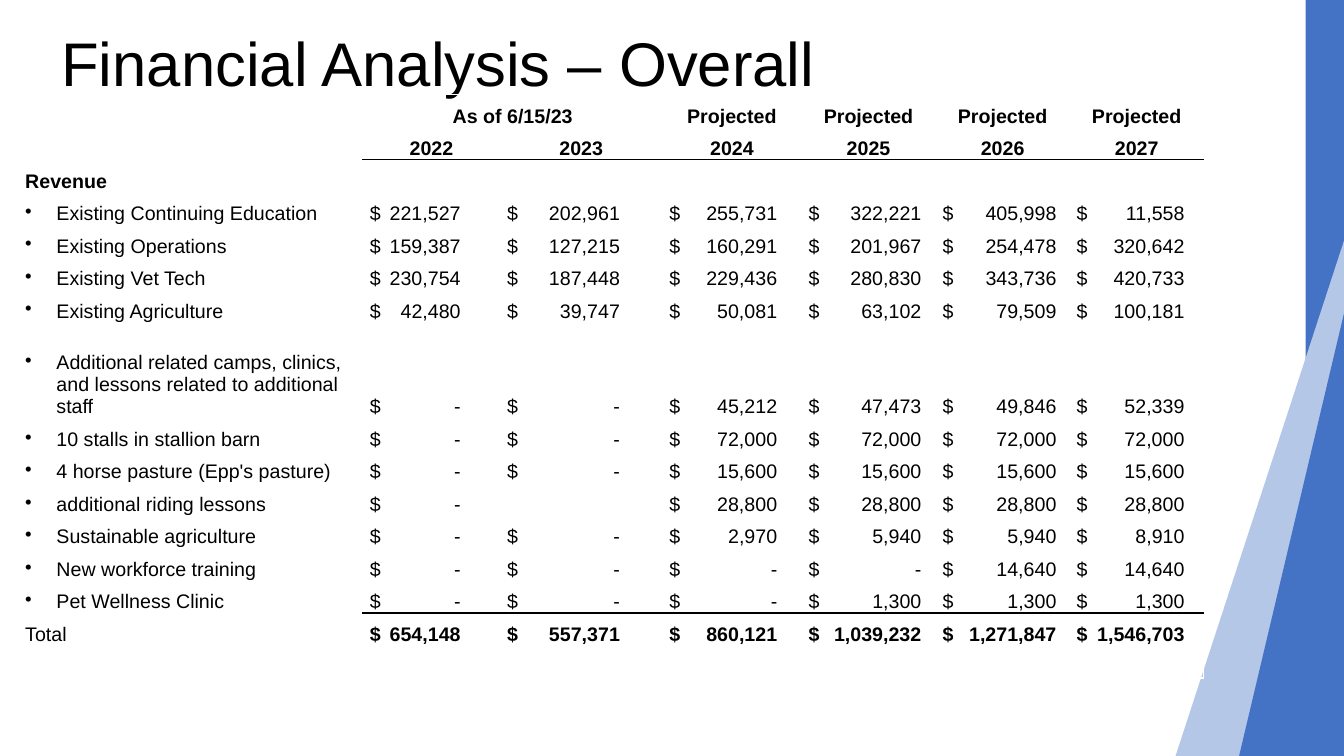
"""Builds the overall financial analysis slide with its revenue table."""
from lxml import etree
from pptx import Presentation
from pptx.dml.color import RGBColor
from pptx.enum.shapes import MSO_SHAPE
from pptx.enum.text import MSO_ANCHOR, PP_ALIGN
from pptx.oxml.ns import qn
from pptx.util import Inches, Pt

RECTANGLE = MSO_SHAPE.RECTANGLE
TRIANGLE = MSO_SHAPE.ISOSCELES_TRIANGLE
MIDDLE, BOTTOM = MSO_ANCHOR.MIDDLE, MSO_ANCHOR.BOTTOM
LEFT, CENTER = PP_ALIGN.LEFT, PP_ALIGN.CENTER
BLACK = RGBColor(0x00, 0x00, 0x00)
BLUE = RGBColor(0x44, 0x72, 0xC4)
PALE_BLUE = RGBColor(0xB4, 0xC7, 0xE7)
FONT = "Arial"

WIDTH, HEIGHT = 13.33, 7.5
TABLE_LEFT, TABLE_TOP, TABLE_HEIGHT = 0.24, 0.94, 5.79
COLUMN_WIDTHS = [3.36, 1.36, 1.61, 1.38, 1.33, 1.33, 1.33]
AMOUNT_TABS = [0.9, 1.12, 1.07, 1.12, 1.13, 1.07]
TALL_ROW, TALL_HEIGHT = 7, 0.95
HEADER_ROWS, YEAR_ROW, LAST_ITEM_ROW, TOTAL_ROW = 2, 1, 13, 14
BULLET_INDENT = 0.31

ROWS = [
    ["", "As of 6/15/23", "", "Projected", "Projected", "Projected", "Projected"],
    ["", "2022", "2023", "2024", "2025", "2026", "2027"],
    ["Revenue", "", "", "", "", "", ""],
    ["Existing Continuing Education", "221,527", "202,961", "255,731", "322,221", "405,998", "11,558"],
    ["Existing Operations", "159,387", "127,215", "160,291", "201,967", "254,478", "320,642"],
    ["Existing Vet Tech", "230,754", "187,448", "229,436", "280,830", "343,736", "420,733"],
    ["Existing Agriculture", "42,480", "39,747", "50,081", "63,102", "79,509", "100,181"],
    ["Additional related camps, clinics, and lessons related to additional staff",
     "-", "-", "45,212", "47,473", "49,846", "52,339"],
    ["10 stalls in stallion barn", "-", "-", "72,000", "72,000", "72,000", "72,000"],
    ["4 horse pasture (Epp's pasture)", "-", "-", "15,600", "15,600", "15,600", "15,600"],
    ["additional riding lessons", "-", "", "28,800", "28,800", "28,800", "28,800"],
    ["Sustainable agriculture", "-", "-", "2,970", "5,940", "5,940", "8,910"],
    ["New workforce training", "-", "-", "-", "-", "14,640", "14,640"],
    ["Pet Wellness Clinic", "-", "-", "-", "1,300", "1,300", "1,300"],
    ["Total", "654,148", "557,371", "860,121", "1,039,232", "1,271,847", "1,546,703"],
    ["", "", "", "", "", "", ""],
]
RULES = {YEAR_ROW: "a:lnB", YEAR_ROW + 1: "a:lnT", LAST_ITEM_ROW: "a:lnB", TOTAL_ROW: "a:lnT"}


def style_paragraph(paragraph, size, bold, alignment):
    """Sets the font and alignment of one paragraph."""
    paragraph.alignment = alignment
    paragraph.font.name = FONT
    paragraph.font.size = Pt(size)
    paragraph.font.bold = bold
    paragraph.font.color.rgb = BLACK


def add_rule(cell, edge):
    """Draws a thin black line along one edge of a cell."""
    line = etree.Element(qn(edge), w=str(Pt(1)))
    fill = etree.SubElement(line, qn("a:solidFill"))
    etree.SubElement(fill, qn("a:srgbClr"), val=str(BLACK))
    cell._tc.get_or_add_tcPr().insert(0, line)


deck = Presentation()
deck.slide_width, deck.slide_height = Inches(WIDTH), Inches(HEIGHT)
page = deck.slides.add_slide(deck.slide_layouts[6])

title = page.shapes.add_textbox(Inches(0.51), Inches(0.24), Inches(8.52), Inches(0.84))
title.text_frame.word_wrap = True
title.text_frame.vertical_anchor = MIDDLE
heading = title.text_frame.paragraphs[0]
heading.text = "Financial Analysis – Overall"
heading.line_spacing = 0.9
style_paragraph(heading, 44, False, LEFT)

for preset, width, height, color in [
    (RECTANGLE, 0.38, HEIGHT, BLUE),
    (TRIANGLE, 1.67, 5.11, PALE_BLUE),
    (TRIANGLE, 1.04, 4.39, BLUE),
]:
    accent = page.shapes.add_shape(
        preset, Inches(WIDTH - width), Inches(HEIGHT - height), Inches(width), Inches(height))
    accent.shadow.inherit = False
    accent.fill.solid()
    accent.fill.fore_color.rgb = color
    accent.line.fill.background()
    if preset == TRIANGLE:
        accent.adjustments[0] = 0
        accent.element.spPr.find(qn("a:xfrm")).set("flipH", "1")

table = page.shapes.add_table(
    len(ROWS), len(COLUMN_WIDTHS), Inches(TABLE_LEFT), Inches(TABLE_TOP),
    Inches(sum(COLUMN_WIDTHS)), Inches(TABLE_HEIGHT)).table
table.first_row = table.horz_banding = False
for column, width in zip(table.columns, COLUMN_WIDTHS):
    column.width = Inches(width)
row_height = (TABLE_HEIGHT - TALL_HEIGHT) / (len(ROWS) - 1)
for number, row in enumerate(table.rows):
    row.height = Inches(TALL_HEIGHT if number == TALL_ROW else row_height)
table.cell(0, 1).merge(table.cell(0, 2))

for row, values in enumerate(ROWS):
    is_header = row < HEADER_ROWS
    is_item = HEADER_ROWS < row < TOTAL_ROW
    for column, value in enumerate(values):
        cell = table.cell(row, column)
        is_amount = bool(value) and column > 0 and not is_header
        cell.fill.background()
        cell.vertical_anchor = BOTTOM
        cell.margin_left = Inches(0.07 if is_amount else 0.01)
        cell.margin_right = cell.margin_top = Inches(0.01)
        cell.margin_bottom = 0
        paragraph = cell.text_frame.paragraphs[0]
        if value:
            paragraph.text = f"$\t{value}" if is_amount else value
        bold = row <= HEADER_ROWS or (row == TOTAL_ROW and column > 0)
        style_paragraph(paragraph, 14, bold, CENTER if is_header else LEFT)
        properties = paragraph._p.get_or_add_pPr()
        if is_amount:
            tabs = etree.Element(qn("a:tabLst"))
            etree.SubElement(tabs, qn("a:tab"), pos=str(Inches(AMOUNT_TABS[column - 1])), algn="r")
            properties.insert(0, tabs)
        elif is_item and column == 0:
            properties.set("marL", str(Inches(BULLET_INDENT)))
            properties.set("indent", str(-Inches(BULLET_INDENT)))
            properties.insert(0, etree.Element(qn("a:buChar"), char="•"))
        if column > 0 and row in RULES:
            add_rule(cell, RULES[row])

deck.save("out.pptx")
